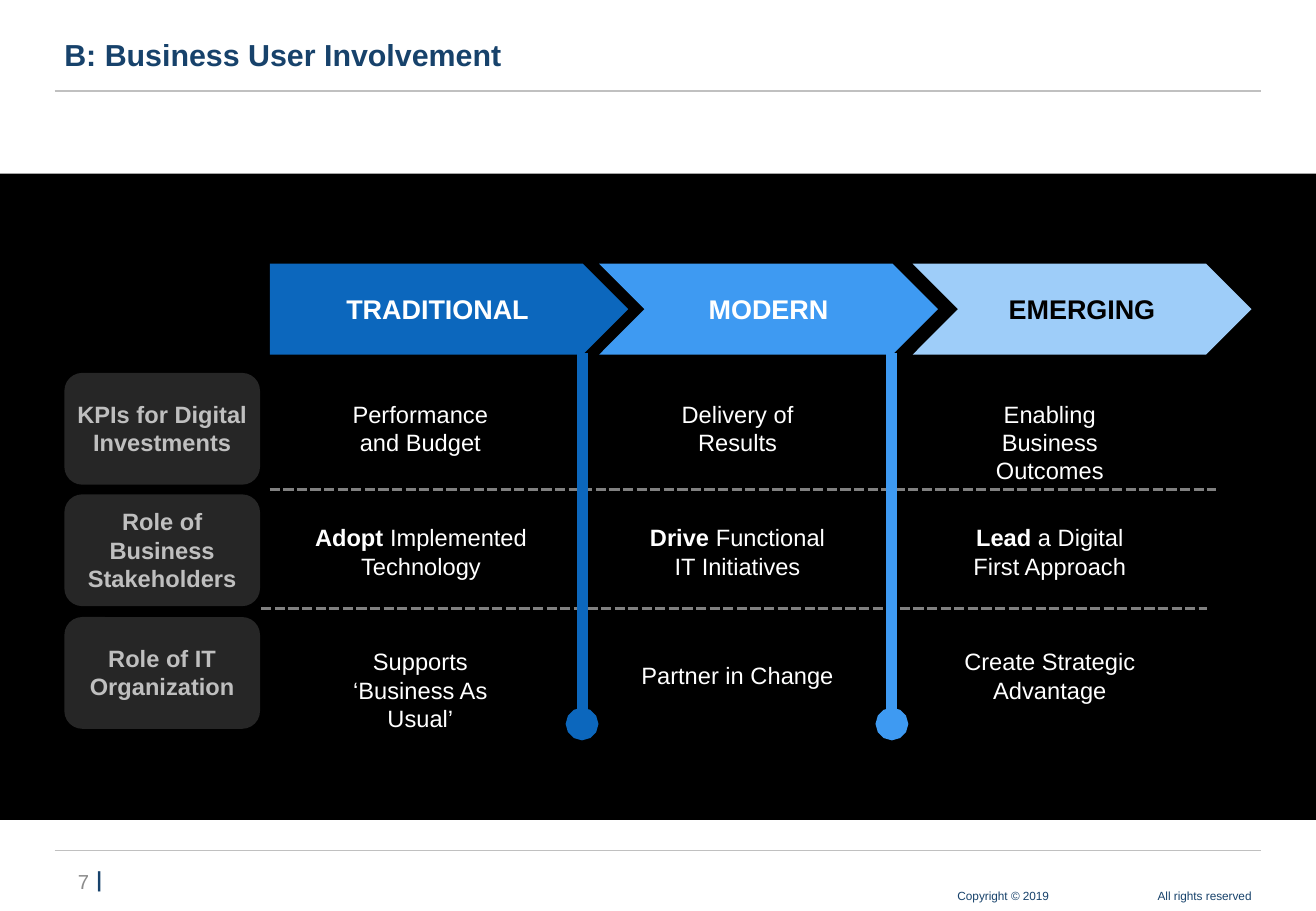
from dataclasses import dataclass
from typing import NamedTuple

from lxml.etree import SubElement
from pptx import Presentation
from pptx.dml.color import RGBColor
from pptx.enum.dml import MSO_LINE
from pptx.enum.shapes import MSO_CONNECTOR, MSO_SHAPE as Preset
from pptx.enum.text import MSO_ANCHOR as Anchor, PP_ALIGN as Align
from pptx.oxml.ns import qn
from pptx.util import Emu, Pt

PX = 9144  # 100 px to the inch


@dataclass(frozen=True)
class Theme:
    font: str = "Arial"
    bar_font: str = "Noto Sans CJK KR"
    navy: str = "17426B"
    rule: str = "C0C0C0"
    page: str = "8C8C8C"
    black: str = "000000"
    white: str = "FFFFFF"
    tile: str = "262626"
    tile_text: str = "BFBFBF"
    dash: str = "808080"
    deep_blue: str = "0C67BD"
    mid_blue: str = "3E9AF2"
    pale_blue: str = "9ECDF9"
    title_size: int = 18
    stage_size: int = 16
    body_size: int = 14
    page_size: int = 12
    footer_size: int = 7


THEME = Theme()


class Box(NamedTuple):
    left: int
    top: int
    width: int
    height: int

    def emu(self) -> list[Emu]:
        return [Emu(side * PX) for side in self]


class Run(NamedTuple):
    text: str
    bold: bool = False
    color: str = ""
    font: str = THEME.font


class Stage(NamedTuple):
    name: str
    preset: Preset
    left: int
    width: int
    fill: str
    color: str


class Divider(NamedTuple):
    start: tuple[int, int]
    end: tuple[int, int]
    color: str
    weight: float
    dashed: bool = False
    dot: bool = False


class Cell(NamedTuple):
    lines: list[list[Run]]
    width: int = 166
    drop: int = 0
    height: int = 57


BAND = Box(0, 143, 1083, 532)
STAGE_TOP, STAGE_HEIGHT = 217, 75
STAGES = [
    Stage("TRADITIONAL", Preset.PENTAGON, 222, 295, THEME.deep_blue, THEME.white),
    Stage("MODERN", Preset.CHEVRON, 493, 279, THEME.mid_blue, THEME.white),
    Stage("EMERGING", Preset.CHEVRON, 751, 279, THEME.pale_blue, THEME.black),
]
TOPICS = ["KPIs for Digital Investments", "Role of Business Stakeholders", "Role of IT Organization"]
TOPIC_TOPS = [307, 407, 508]
COLUMN_CENTRES = [346, 607, 864]
FIRST_ROW_TOP, ROW_STEP = 324, 102
ROWS = [
    [
        Cell([[Run("Performance")], [Run("and Budget")]]),
        Cell([[Run("Delivery of Results")]]),
        Cell([[Run("Enabling Business Outcomes")]], height=81),
    ],
    [
        Cell([[Run("Adopt ", True), Run("Implemented Technology")]], width=227),
        Cell([[Run("Drive ", True), Run("Functional IT Initiatives")]]),
        Cell([[Run("Lead", True), Run(" a Digital First Approach")]]),
    ],
    [
        Cell([[Run("Supports ‘Business As Usual’")]], width=180, height=81),
        Cell([[Run("Partner in Change")]], width=180, drop=11, height=34),
        Cell([[Run("Create Strategic Advantage")]], width=180),
    ],
]
PAGE_RULES = [Divider((45, y), (1038, y), THEME.rule, 0.75) for y in (75, 700)]
GRID_LINES = [
    Divider((222, 403), (1001, 403), THEME.dash, 2, dashed=True),
    Divider((215, 501), (993, 501), THEME.dash, 2, dashed=True),
    Divider((479, 596), (479, 291), THEME.deep_blue, 6.5, dot=True),
    Divider((734, 596), (734, 291), THEME.mid_blue, 6.5, dot=True),
]


def write(shape, lines: list[list[Run]], *, size: int, color: str, align=Align.LEFT,
          anchor=Anchor.TOP, margins=(10, 5, 10, 5), wrap: bool = True) -> None:
    """Fill a shape with one paragraph per line; margins run left, top, right, bottom."""
    frame = shape.text_frame
    frame.word_wrap = wrap
    frame.vertical_anchor = anchor
    frame.margin_left, frame.margin_top, frame.margin_right, frame.margin_bottom = (
        Emu(margin * PX) for margin in margins)
    for index, runs in enumerate(lines):
        paragraph = frame.add_paragraph() if index else frame.paragraphs[0]
        paragraph.alignment = align
        for part in runs:
            run = paragraph.add_run()
            run.text = part.text
            run.font.size = Pt(size)
            run.font.bold = part.bold
            run.font.color.rgb = RGBColor.from_string(part.color or color)
            run.font.name = part.font
            SubElement(run.font._element, qn("a:ea"), typeface=part.font)


def add_panel(slide, preset: Preset, box: Box, fill: str):
    panel = slide.shapes.add_shape(preset, *box.emu())
    panel.shadow.inherit = False
    panel.fill.solid()
    panel.fill.fore_color.rgb = RGBColor.from_string(fill)
    panel.line.fill.background()
    return panel


def add_label(slide, box: Box, lines: list[list[Run]], **text_format) -> None:
    write(slide.shapes.add_textbox(*box.emu()), lines, **text_format)


def add_divider(slide, divider: Divider) -> None:
    ends = [Emu(value * PX) for value in divider.start + divider.end]
    connector = slide.shapes.add_connector(MSO_CONNECTOR.STRAIGHT, *ends)
    connector.line.color.rgb = RGBColor.from_string(divider.color)
    connector.line.width = Pt(divider.weight)
    if divider.dashed:
        connector.line.dash_style = MSO_LINE.SQUARE_DOT
    if divider.dot:
        SubElement(connector.line._get_or_add_ln(), qn("a:headEnd"), type="oval")
    SubElement(connector._element.spPr, qn("a:effectLst"))


def add_page_frame(slide) -> None:
    for rule in PAGE_RULES:
        add_divider(slide, rule)
    footer = dict(size=THEME.footer_size, color=THEME.navy, margins=(0, 4, 0, 4), wrap=False)
    add_label(slide, Box(788, 728, 76, 20), [[Run("Copyright © 2019")]], **footer)
    add_label(slide, Box(951, 728, 79, 20), [[Run("All rights reserved")]], align=Align.RIGHT, **footer)
    heading = dict(anchor=Anchor.MIDDLE, margins=(0, 5, 0, 5))
    add_label(slide, Box(53, 21, 976, 47), [[Run("B: Business User Involvement", True)]],
              size=THEME.title_size, color=THEME.navy, **heading)
    add_label(slide, Box(53, 711, 37, 30), [[Run("7"), Run("┃", True, THEME.navy, THEME.bar_font)]],
              size=THEME.page_size, color=THEME.page, align=Align.RIGHT, wrap=False, **heading)


def add_matrix(slide) -> None:
    add_panel(slide, Preset.RECTANGLE, BAND, THEME.black)
    centred = dict(align=Align.CENTER, anchor=Anchor.MIDDLE)
    for stage in STAGES:
        arrow = add_panel(slide, stage.preset, Box(stage.left, STAGE_TOP, stage.width, STAGE_HEIGHT), stage.fill)
        write(arrow, [[Run(stage.name, True)]], size=THEME.stage_size, color=stage.color, **centred)
    for topic, top in zip(TOPICS, TOPIC_TOPS):
        tile = add_panel(slide, Preset.ROUNDED_RECTANGLE, Box(53, top, 161, 92), THEME.tile)
        tile.adjustments[0] = 0.16
        write(tile, [[Run(topic, True)]], size=THEME.body_size, color=THEME.tile_text,
              margins=(4, 4, 4, 5), **centred)
    for line in GRID_LINES:
        add_divider(slide, line)
    for row, cells in enumerate(ROWS):
        for centre, cell in zip(COLUMN_CENTRES, cells):
            top = FIRST_ROW_TOP + row * ROW_STEP + cell.drop
            add_label(slide, Box(centre - cell.width // 2, top, cell.width, cell.height), cell.lines,
                      size=THEME.body_size, color=THEME.white, align=Align.CENTER)


def main() -> None:
    deck = Presentation()
    deck.slide_width, deck.slide_height = Emu(1083 * PX), Emu(750 * PX)
    slide = deck.slides.add_slide(deck.slide_layouts[6])
    add_page_frame(slide)
    add_matrix(slide)
    deck.save("out.pptx")


if __name__ == "__main__":
    main()
